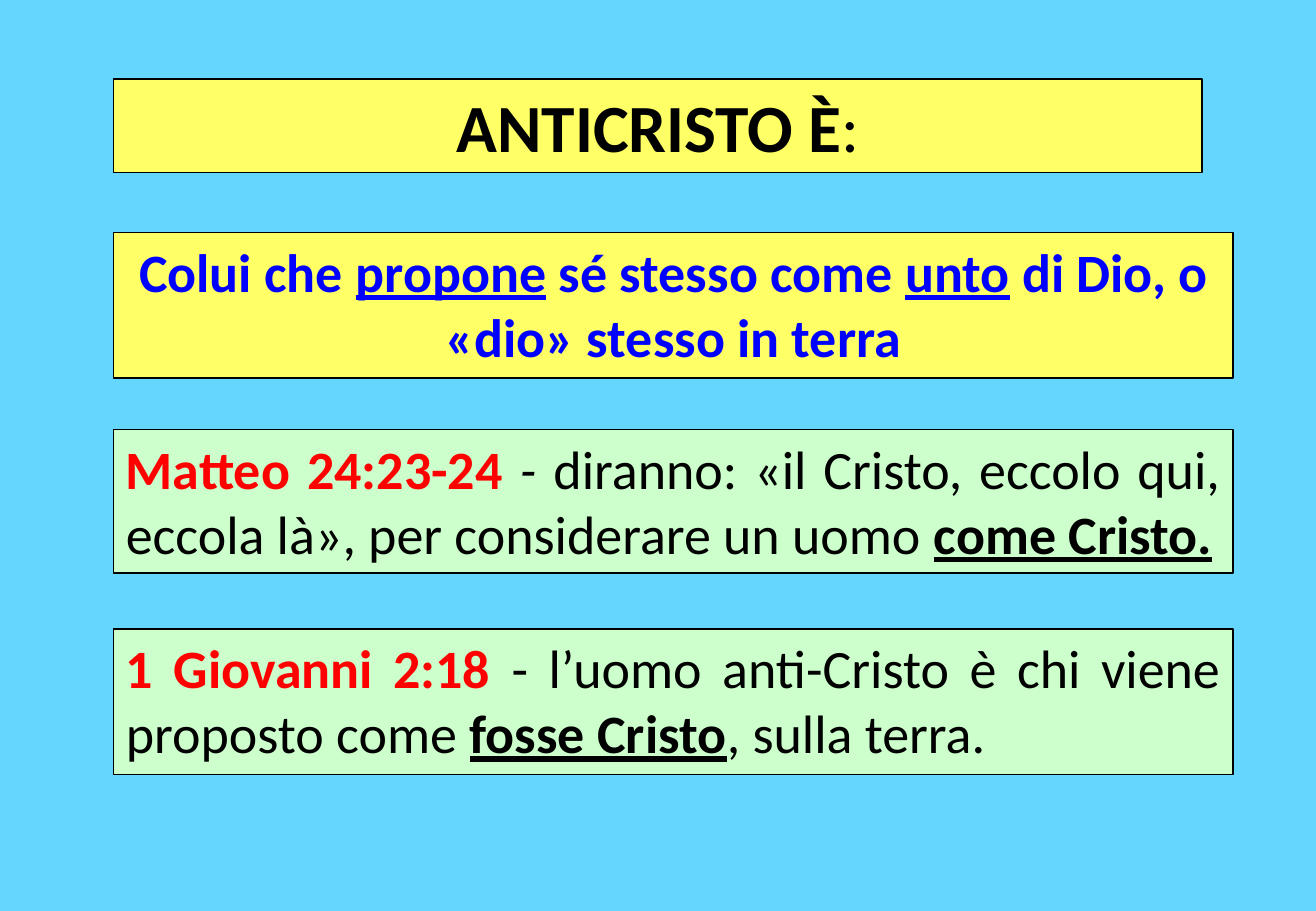
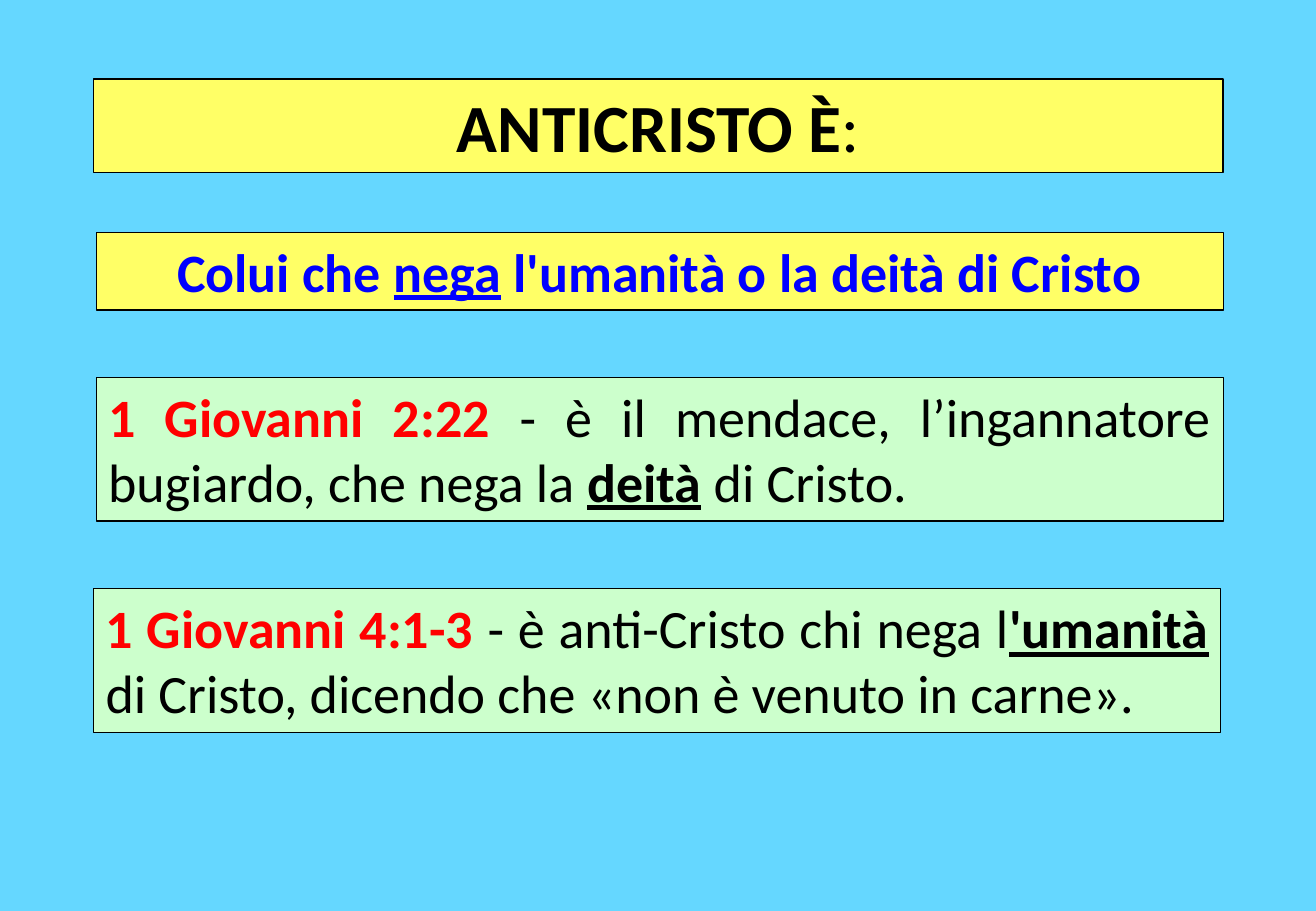
"""Builds two slides on who the antichrist is."""
import pptx
import pptx.dml.color
import pptx.enum.shapes
import pptx.enum.text
import pptx.util

Pt = pptx.util.Pt
ALIGN = pptx.enum.text.PP_ALIGN


def tint(code):
    """Turn a hex string into a colour."""
    return pptx.dml.color.RGBColor.from_string(code)


def write(para, text, size=32, color="000000", bold=False, under=False, slant=False):
    """Add one formatted run to a paragraph."""
    run = para.add_run()
    run.text = text
    font = run.font
    font.name = "Calibri"
    font.size = Pt(size)
    font.color.rgb = tint(color)
    font.bold = bold
    font.underline = under
    font.italic = slant


class Deck:
    """Holds the style and the current slide."""

    back, gold, mint = "65D7FF", "FFFF66", "CCFFCC"
    ink, blue, red = "000000", "0000FF", "FF0000"

    def __init__(self):
        """Start a deck of the right size."""
        self.show = pptx.Presentation()
        self.show.slide_width = Pt(780)
        self.show.slide_height = Pt(540)

    def page(self):
        """Start a blank slide with the shared background."""
        self.slide = self.show.slides.add_slide(self.show.slide_layouts[6])
        fill = self.slide.background.fill
        fill.solid()
        fill.fore_color.rgb = tint(self.back)

    def box(self, left, top, width, height, fill, align):
        """Draw a framed box and return its paragraph."""
        shape = self.slide.shapes.add_shape(
            pptx.enum.shapes.MSO_SHAPE.RECTANGLE,
            Pt(left), Pt(top), Pt(width), Pt(height))
        shape.shadow.inherit = False
        shape.fill.solid()
        shape.fill.fore_color.rgb = tint(fill)
        shape.line.color.rgb = tint(self.ink)
        shape.line.width = Pt(0.75)
        frame = shape.text_frame
        frame.word_wrap = True
        frame.auto_size = pptx.enum.text.MSO_AUTO_SIZE.SHAPE_TO_FIT_TEXT
        frame.vertical_anchor = pptx.enum.text.MSO_ANCHOR.TOP
        para = frame.paragraphs[0]
        para.alignment = align
        return para

    def title(self, left, width):
        """Add the shared heading."""
        para = self.box(left, 46.8, width, 55.7, self.gold, ALIGN.CENTER)
        write(para, "ANTICRISTO È", size=40, bold=True)
        write(para, ":", size=40)

    def claim(self, left, width, height, *parts):
        """Add the blue claim, with every second part underlined."""
        para = self.box(left, 137.7, width, height, self.gold, ALIGN.CENTER)
        for spot, text in enumerate(parts):
            write(para, text, color=self.blue, bold=True, under=spot % 2 == 1)

    def verse(self, left, top, width, source, lead, key, rest="", dash="", height=85):
        """Add a Bible verse with a red source and a key phrase."""
        para = self.box(left, top, width, height, self.mint, ALIGN.JUSTIFY)
        write(para, source, color=self.red, bold=True)
        if dash:
            write(para, dash, slant=True)
        write(para, lead)
        write(para, key, bold=True, under=True)
        if rest:
            write(para, rest)


def main():
    """Build and save the deck."""
    deck = Deck()

    deck.page()
    left, width = 67.5, 663.3
    deck.title(left, 645)
    deck.claim(left, width, 86.4, "Colui che ", "propone", " sé stesso come ",
               "unto", " di Dio, o «dio» stesso in terra")
    deck.verse(left, 254.7, width, "Matteo 24:23-24 ",
               "diranno: «il Cristo, eccolo qui, eccola là», per considerare un uomo ",
               "come Cristo.", dash="- ")
    deck.verse(left, 372.8, width, "1 Giovanni 2:18 ",
               "- l’uomo anti-Cristo è chi viene proposto come ",
               "fosse Cristo", ", sulla terra.", height=86.4)

    deck.page()
    left, width = 57, 668
    deck.title(55.5, 669.5)
    deck.claim(left, width, 46, "Colui che ", "nega",
               " l'umanità o la deità di Cristo")
    deck.verse(left, 223.8, width, "1 Giovanni 2:22",
               " - è il mendace, l’ingannatore bugiardo, che nega la ",
               "deità", " di Cristo.")
    deck.verse(55.5, 349, width, "1 Giovanni 4:1-3",
               " - è anti-Cristo chi nega l", "'umanità",
               " di Cristo, dicendo che «non è venuto in carne».")

    deck.show.save("out.pptx")


if __name__ == "__main__":
    main()
